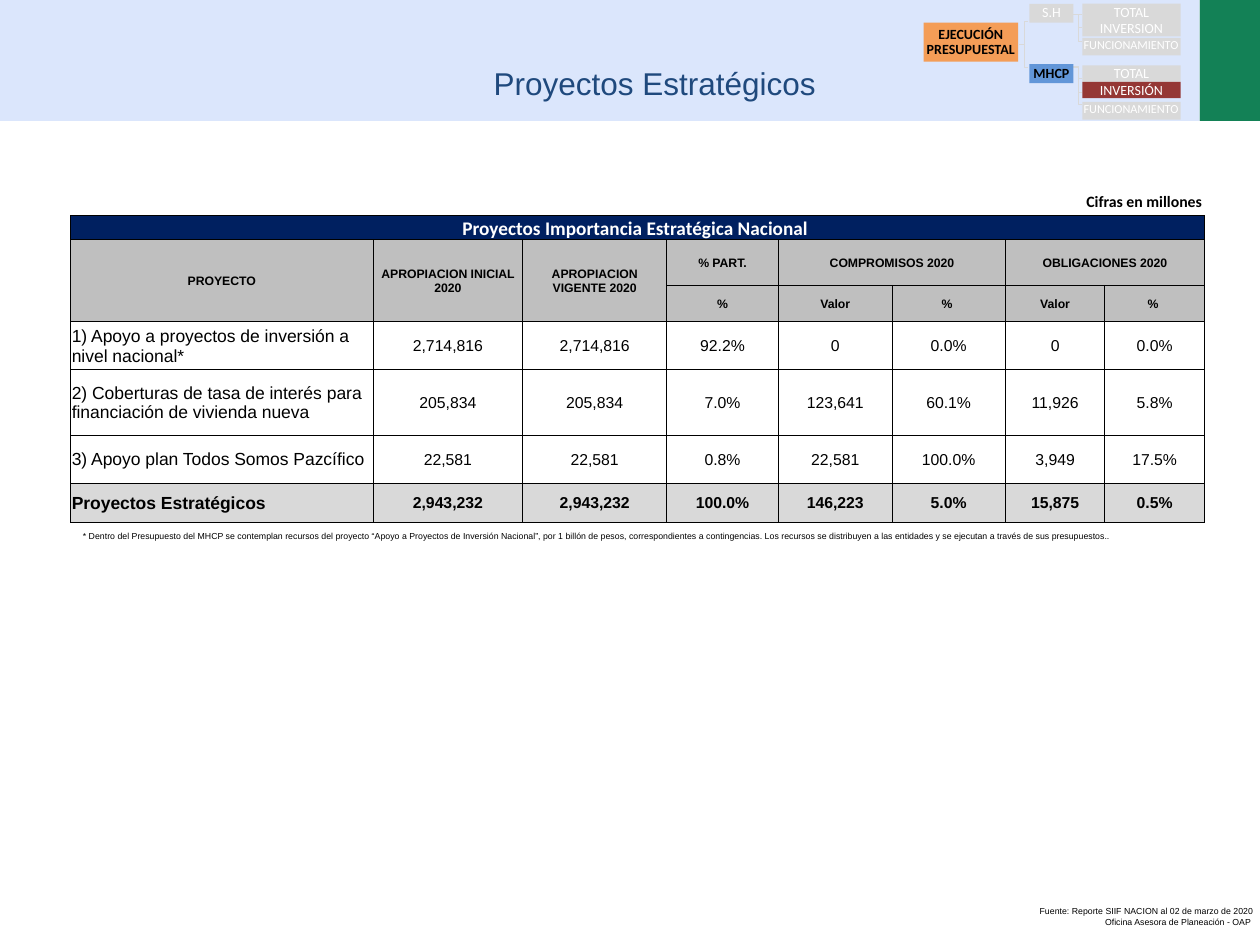
import lxml.etree
import pptx
import pptx.dml.color
import pptx.enum.shapes
import pptx.enum.text
import pptx.oxml.ns
import pptx.util

Inches = pptx.util.Inches
Pt = pptx.util.Pt
RGBColor = pptx.dml.color.RGBColor
Align = pptx.enum.text.PP_ALIGN
Anchor = pptx.enum.text.MSO_ANCHOR
qn = pptx.oxml.ns.qn

BLACK = RGBColor(0x00, 0x00, 0x00)
WHITE = RGBColor(0xFF, 0xFF, 0xFF)
GREEN = RGBColor(0x13, 0x81, 0x56)
PALE_BLUE = RGBColor(0xDB, 0xE6, 0xFC)
TITLE_BLUE = RGBColor(0x1F, 0x49, 0x7D)
NAVY = RGBColor(0x00, 0x20, 0x60)
ORANGE = RGBColor(0xF7, 0x96, 0x46)
BLUE = RGBColor(0x55, 0x8E, 0xD5)
DARK_RED = RGBColor(0x95, 0x37, 0x35)
LIGHT_GRAY = RGBColor(0xD9, 0xD9, 0xD9)
HEADER_GRAY = RGBColor(0xBF, 0xBF, 0xBF)


class BudgetSlide:
    body_font = "Arial"
    accent_font = "Calibri"
    inset = Inches(0.01)

    def __init__(self, slide):
        self.shapes = slide.shapes

    def set_text(self, frame, text, size, color=BLACK, bold=False, font=None,
                 align=Align.LEFT, spacing=None):
        frame.text = text
        frame.word_wrap = True
        for paragraph in frame.paragraphs:
            paragraph.alignment = align
            if spacing:
                paragraph.line_spacing = spacing
            for run in paragraph.runs:
                run.font.name = font or self.body_font
                run.font.size = Pt(size)
                run.font.bold = bold
                run.font.color.rgb = color

    def text(self, left, top, width, height, text, size, anchor=Anchor.TOP, **style):
        box = self.shapes.add_textbox(Inches(left), Inches(top), Inches(width), Inches(height))
        box.text_frame.vertical_anchor = anchor
        self.set_text(box.text_frame, text, size, **style)

    def block(self, left, top, width, height, fill, opacity=100):
        block = self.shapes.add_shape(
            pptx.enum.shapes.MSO_SHAPE.RECTANGLE,
            Inches(left), Inches(top), Inches(width), Inches(height))
        block.shadow.inherit = False
        block.fill.solid()
        block.fill.fore_color.rgb = fill
        block.line.fill.background()
        if opacity < 100:
            tint = block._element.spPr.find(qn("a:solidFill"))[0]
            lxml.etree.SubElement(tint, qn("a:alpha"), val=str(opacity * 1000))
        return block

    def node(self, left, top, width, height, text, fill=LIGHT_GRAY, size=8,
             align=Align.CENTER, highlighted=False):
        node = self.block(left, top, width, height, fill, 90 if highlighted else 100)
        frame = node.text_frame
        frame.margin_left = frame.margin_right = self.inset
        frame.margin_top = frame.margin_bottom = self.inset
        frame.vertical_anchor = Anchor.MIDDLE if highlighted else Anchor.TOP
        self.set_text(frame, text, size, BLACK if highlighted else WHITE, highlighted,
                      self.accent_font, align, 0.9)

    def branch(self, x1, y1, x2, y2):
        branch = self.shapes.add_connector(
            pptx.enum.shapes.MSO_CONNECTOR.ELBOW,
            Inches(x1), Inches(y1), Inches(x2), Inches(y2))
        branch.line.color.rgb = LIGHT_GRAY
        branch.line.width = Pt(0.25)
        lxml.etree.SubElement(branch._element.spPr, qn("a:effectLst"))

    def table(self, left, top, widths, heights):
        table = self.shapes.add_table(
            len(heights), len(widths), Inches(left), Inches(top),
            Inches(sum(widths)), Inches(sum(heights))).table
        table.first_row = table.horz_banding = False
        for column, width in zip(table.columns, widths):
            column.width = Inches(width)
        for row, height in zip(table.rows, heights):
            row.height = Inches(height)
        return table

    def cell(self, cell, text, fill, size, **style):
        cell.margin_left = cell.margin_right = cell.margin_top = self.inset
        cell.margin_bottom = 0
        cell.vertical_anchor = Anchor.MIDDLE
        properties = cell._tc.get_or_add_tcPr()
        for side in ("lnL", "lnR", "lnT", "lnB"):
            border = lxml.etree.SubElement(properties, qn(f"a:{side}"), w=str(Pt(0.5)))
            ink = lxml.etree.SubElement(border, qn("a:solidFill"))
            lxml.etree.SubElement(ink, qn("a:srgbClr"), val=str(BLACK))
        if fill is None:
            cell.fill.background()
        else:
            cell.fill.solid()
            cell.fill.fore_color.rgb = fill
        if text:
            self.set_text(cell.text_frame, text, size, **style)


HEADINGS = [
    ["Proyectos Importancia Estratégica Nacional "] + [""] * 7,
    ["PROYECTO", "APROPIACION INICIAL 2020", "APROPIACION VIGENTE 2020", "% PART.",
     "COMPROMISOS 2020", "", "OBLIGACIONES 2020", ""],
    ["", "", "", "%", "Valor", "% ", "Valor", "% "],
]
PROJECTS = [
    ["1) Apoyo a proyectos de inversión a nivel nacional*",
     "2,714,816", "2,714,816", "92.2%", "0", "0.0%", "0", "0.0%"],
    ["2) Coberturas de tasa de interés para financiación de vivienda nueva",
     "205,834", "205,834", "7.0%", "123,641", "60.1%", "11,926", "5.8%"],
    ["3) Apoyo plan Todos Somos Pazcífico",
     "22,581", "22,581", "0.8%", "22,581", "100.0%", "3,949", "17.5%"],
    ["Proyectos Estratégicos",
     "2,943,232", "2,943,232", "100.0%", "146,223", "5.0%", "15,875", "0.5%"],
]
MERGES = [(0, 0, 0, 7), (1, 0, 2, 0), (1, 1, 2, 1), (1, 2, 2, 2), (1, 4, 1, 5), (1, 6, 1, 7)]


def draw_navigation(page):
    for start, ends in ((0.53, (0.83, 0.73, 0.62)), (0.11, (0.33, 0.22, 0.11))):
        for end in ends:
            page.branch(8.52, start, 8.59, end)
    for end in (0.53, 0.17):
        page.branch(8.09, 0.35, 8.16, end)

    page.node(7.33, 0.18, 0.75, 0.31, "EJECUCIÓN PRESUPUESTAL", ORANGE, highlighted=True)
    page.node(8.17, 0.03, 0.35, 0.15, "S.H")
    page.node(8.17, 0.51, 0.35, 0.15, "MHCP", BLUE, highlighted=True)
    for top, label, fill in ((0.03, "TOTAL", LIGHT_GRAY), (0.16, "INVERSION", LIGHT_GRAY),
                             (0.52, "TOTAL", LIGHT_GRAY), (0.65, "INVERSIÓN", DARK_RED)):
        page.node(8.59, top, 0.78, 0.13, label, fill)
    for top in (0.3, 0.81):
        page.node(8.59, top, 0.78, 0.14, "FUNCIONAMIENTO", size=7, align=Align.LEFT)


def draw_projects(page):
    projects = page.table(0.56, 1.71, [2.4, 1.19, 1.14, 0.89, 0.9, 0.9, 0.79, 0.79],
                          [0.19, 0.36, 0.29, 0.38, 0.52, 0.38, 0.31])
    for top, left, bottom, right in MERGES:
        projects.cell(top, left).merge(projects.cell(bottom, right))
    total_row = len(HEADINGS) + len(PROJECTS) - 1
    for r, values in enumerate(HEADINGS + PROJECTS):
        for c, value in enumerate(values):
            cell = projects.cell(r, c)
            if r == 0:
                page.cell(cell, value, NAVY, 11, color=WHITE, bold=True,
                          font=page.accent_font, align=Align.CENTER)
            elif r < len(HEADINGS):
                page.cell(cell, value, HEADER_GRAY, 7, bold=True, align=Align.CENTER)
            else:
                is_total = r == total_row
                page.cell(cell, value, LIGHT_GRAY if is_total else None,
                          9 if c else 10, bold=is_total,
                          align=Align.CENTER if c else Align.LEFT)


def main():
    deck = pptx.Presentation()
    deck.slide_width, deck.slide_height = Inches(10), Inches(7.5)
    page = BudgetSlide(deck.slides.add_slide(deck.slide_layouts[6]))

    page.block(9.52, 0, 0.48, 0.96, GREEN)
    page.block(0, 0, 9.52, 0.96, PALE_BLUE)
    page.text(8.11, 1.37, 1.97, 0.33, "Cifras en millones ", 9, Anchor.MIDDLE, bold=True,
              font=page.accent_font, align=Align.CENTER, spacing=Pt(20))
    page.text(3.82, 0.46, 5.31, 0.4, "Proyectos Estratégicos", 18, color=TITLE_BLUE)
    draw_navigation(page)
    page.text(0.56, 4.16, 9.14, 0.19,
              "* Dentro del Presupuesto del MHCP se contemplan recursos del proyecto “Apoyo a "
              "Proyectos de Inversión Nacional”, por 1 billón de pesos, correspondientes a "
              "contingencias. Los recursos se distribuyen a las entidades y se ejecutan a "
              "través de sus presupuestos.. ", 5, align=Align.JUSTIFY)
    page.text(6.52, 7.14, 3.53, 0.27,
              "Fuente: Reporte SIIF NACION al 02 de marzo de 2020\n"
              "Oficina Asesora de Planeación - OAP ", 5, align=Align.RIGHT)
    draw_projects(page)
    deck.save("out.pptx")


if __name__ == "__main__":
    main()
